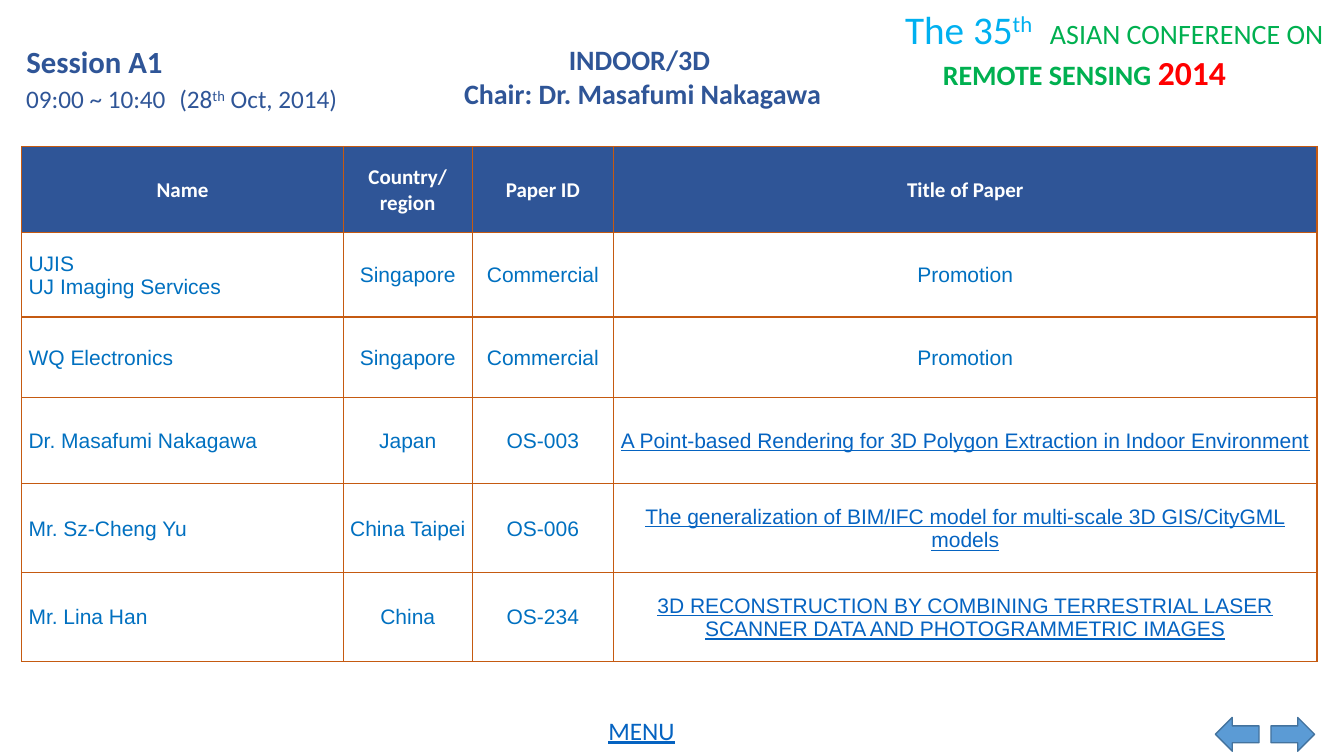
"""Build the session A1 programme slide with its table of papers."""
from lxml import etree
from pptx import Presentation
from pptx import util as u
from pptx.dml.color import RGBColor
from pptx.enum import shapes, text
from pptx.oxml import ns

NAVY, BLUE, LINK, ORANGE, GREEN = "2F5597", "0070C0", "0563C1", "C55A11", "00B050"
LEFT, CENTER = text.PP_ALIGN.LEFT, text.PP_ALIGN.CENTER


def color(hex_code):
    return RGBColor.from_string(hex_code)


def write(frame, lines, align=LEFT, **base):
    """Fill a frame with lines, each a list of (words, format changes)."""
    for number, line in enumerate(lines):
        paragraph = frame.add_paragraph() if number else frame.paragraphs[0]
        paragraph.alignment = align
        for words, changes in line:
            run = paragraph.add_run()
            run.text = words
            look = {"name": "Calibri", "bold": False, **base, **changes}
            run.font.color.rgb = color(look.pop("color"))
            run.font.size = u.Pt(look.pop("size"))
            if look.pop("raised", False):
                run.font._element.set("baseline", "30000")
            for key, value in look.items():
                setattr(run.font, key, value)


deck = Presentation()
deck.slide_width, deck.slide_height = u.Cm(33.87), u.Cm(19.05)
slide = deck.slides.add_slide(deck.slide_layouts[1])
session, menu = slide.placeholders
conference, hours, chair, date = [slide.shapes.add_textbox(0, 0, 0, 0) for _ in range(4)]

places = [
    (conference, 22.56, 0, 11.3, 2.49),
    (session, 0.41, 0.94, 6.53, 1.19),
    (hours, 0.41, 1.98, 6.53, 1.02),
    (chair, 9.5, 0.95, 13.39, 1.96),
    (date, 4.27, 1.98, 6.53, 1.02),
    (menu, 14.63, 17.91, 3.07, 0.97),
]
for box, *place in places:
    box.left, box.top, box.width, box.height = [u.Cm(length) for length in place]
    settings = {"word_wrap": True, "auto_size": text.MSO_AUTO_SIZE.NONE,
                "vertical_anchor": text.MSO_ANCHOR.TOP}
    for key, value in settings.items():
        setattr(box.text_frame, key, value)

conference.text_frame.margin_right = 0
write(conference.text_frame, [
    [("The 35", {}), ("th", {"raised": True}),
     ("\tASIAN CONFERENCE ON", {"size": 20, "color": GREEN})],
    [("REMOTE SENSING ", {"size": 20, "color": GREEN, "bold": True}),
     ("2014", {"size": 24, "color": "FF0000", "bold": True})],
], size=28, color="00B0F0")
heading, subheading = [p._p.get_or_add_pPr() for p in conference.text_frame.paragraphs]
stops = etree.SubElement(heading, ns.qn("a:tabLst"))
etree.SubElement(stops, ns.qn("a:tab"), pos=str(u.Cm(3.65)), algn="l")
subheading.set("marL", str(u.Cm(0.95)))

write(session.text_frame, [[("Session A1", {})]], size=22, color=NAVY, bold=True)
write(hours.text_frame, [[("09:00 ~ 10:40", {})]], size=18, color=NAVY)
write(date.text_frame, [[("(28", {}), ("th", {"raised": True}), (" Oct, 2014)", {})]],
      size=18, color=NAVY)
write(chair.text_frame, [[("INDOOR/3D ", {})], [("Chair: Dr. Masafumi Nakagawa", {})]],
      CENTER, size=20, color=NAVY, bold=True)

menu.text_frame.vertical_anchor = text.MSO_ANCHOR.MIDDLE
write(menu.text_frame, [[("MENU", {})]], CENTER, size=18, color=LINK, underline=True)
menu_format = menu.text_frame.paragraphs[0]._p.get_or_add_pPr()
for key in ("marL", "indent"):
    menu_format.set(key, "0")
etree.SubElement(menu_format, ns.qn("a:buNone"))

papers = [
    ("Name", "Country/\nregion", "Paper ID", "Title of Paper"),
    ("UJIS\nUJ Imaging Services", "Singapore", "Commercial", "Promotion"),
    ("WQ Electronics", "Singapore", "Commercial", "Promotion"),
    ("Dr. Masafumi Nakagawa", "Japan", "OS-003",
     "A Point-based Rendering for 3D Polygon Extraction in Indoor Environment"),
    ("Mr. Sz-Cheng Yu", "China Taipei", "OS-006",
     "The generalization of BIM/IFC model for multi-scale 3D GIS/CityGML models"),
    ("Mr. Lina Han", "China", "OS-234",
     "3D RECONSTRUCTION BY COMBINING TERRESTRIAL LASER SCANNER DATA AND "
     "PHOTOGRAMMETRIC IMAGES"),
]
widths = [8.1, 3.25, 3.56, 17.73]
heights = [2.17, 2.13, 2.03, 2.17, 2.24, 2.24]
programme = slide.shapes.add_table(len(heights), len(widths), u.Cm(0.55), u.Cm(3.69),
                                   u.Cm(sum(widths)), u.Cm(sum(heights))).table
for column, width in zip(programme.columns, widths):
    column.width = u.Cm(width)
for row, height in zip(programme.rows, heights):
    row.height = u.Cm(height)

for r, paper in enumerate(papers):
    for c, entry in enumerate(paper):
        cell = programme.cell(r, c)
        is_name = r > 0 and c == 0
        is_link = c == 3 and paper[2].startswith("OS")
        layout = {"vertical_anchor": text.MSO_ANCHOR.MIDDLE,
                  "margin_left": u.Cm(0.17 if is_name else 0.03),
                  "margin_right": u.Cm(0.03), "margin_top": u.Cm(0.03), "margin_bottom": 0}
        for key, value in layout.items():
            setattr(cell, key, value)
        if r == 0:
            look = {"color": "FFFFFF", "bold": True}
        else:
            look = {"name": "Arial", "color": LINK if is_link else BLUE, "underline": is_link}
        write(cell.text_frame, [[(line, {})] for line in entry.split("\n")],
              LEFT if is_name else CENTER, size=15, **look)
        for side in ("lnL", "lnR", "lnT", "lnB"):
            border = etree.SubElement(cell._tc.get_or_add_tcPr(), ns.qn(f"a:{side}"),
                                      w=str(u.Pt(1)))
            paint = etree.SubElement(border, ns.qn("a:solidFill"))
            etree.SubElement(paint, ns.qn("a:srgbClr"), val=ORANGE)
        cell.fill.solid()
        cell.fill.fore_color.rgb = color("FFFFFF" if r else NAVY)

for direction, left in ((shapes.MSO_SHAPE.RIGHT_ARROW, 32.03),
                        (shapes.MSO_SHAPE.LEFT_ARROW, 30.63)):
    arrow = slide.shapes.add_shape(direction, u.Cm(left), u.Cm(18.08), u.Cm(1.1), u.Cm(0.85))
    arrow.shadow.inherit = False
    arrow.fill.solid()
    arrow.fill.fore_color.rgb = color("5B9BD5")
    arrow.line.color.rgb = color("43739E")
    arrow.line.width = u.Pt(1)

deck.save("out.pptx")
